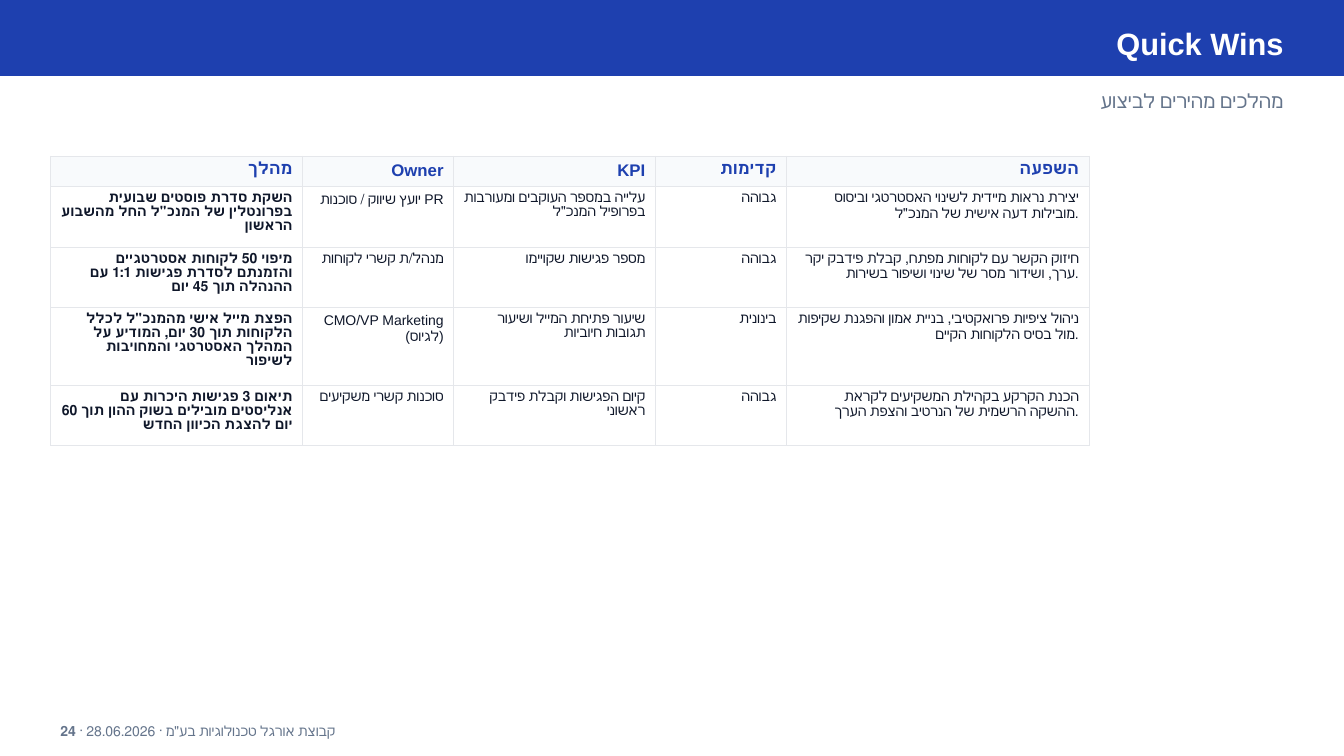
from lxml import etree
from pptx import Presentation
from pptx import util as u
from pptx.dml.color import RGBColor
from pptx.enum import shapes, text
from pptx.oxml.ns import qn

BLUE = RGBColor(0x1E, 0x40, 0xAF)
WHITE = RGBColor(0xFF, 0xFF, 0xFF)
SLATE = RGBColor(0x64, 0x74, 0x8B)
INK = RGBColor(0x0F, 0x17, 0x2A)
PALE = RGBColor(0xF8, 0xFA, 0xFC)
BORDER = RGBColor(0xE5, 0xE7, 0xEB)

WIDTH, HEIGHT = u.Inches(13.33), u.Inches(7.5)
ROW = HEIGHT // 150
MARGIN = 10 * ROW
CONTENT_WIDTH = WIDTH - 2 * MARGIN
COLUMN_SPANS = [50, 30, 40, 26, 60]

HEADERS = ["מהלך", "Owner", "KPI", "קדימות", "השפעה"]
MOVES = [
    ['השקת סדרת פוסטים שבועית בפרונטלין של המנכ"ל החל מהשבוע הראשון',
     "יועץ שיווק / סוכנות PR",
     'עלייה במספר העוקבים ומעורבות בפרופיל המנכ"ל',
     "גבוהה",
     'יצירת נראות מיידית לשינוי האסטרטגי וביסוס מובילות דעה אישית של המנכ"ל.'],
    ["מיפוי 50 לקוחות אסטרטגיים והזמנתם לסדרת פגישות 1:1 עם ההנהלה תוך 45 יום",
     "מנהל/ת קשרי לקוחות",
     "מספר פגישות שקויימו",
     "גבוהה",
     "חיזוק הקשר עם לקוחות מפתח, קבלת פידבק יקר ערך, ושידור מסר של שינוי ושיפור בשירות."],
    ['הפצת מייל אישי מהמנכ"ל לכלל הלקוחות תוך 30 יום, המודיע על המהלך האסטרטגי והמחויבות לשיפור',
     "CMO/VP Marketing (לגיוס)",
     "שיעור פתיחת המייל ושיעור תגובות חיוביות",
     "בינונית",
     "ניהול ציפיות פרואקטיבי, בניית אמון והפגנת שקיפות מול בסיס הלקוחות הקיים."],
    ["תיאום 3 פגישות היכרות עם אנליסטים מובילים בשוק ההון תוך 60 יום להצגת הכיוון החדש",
     "סוכנות קשרי משקיעים",
     "קיום הפגישות וקבלת פידבק ראשוני",
     "גבוהה",
     "הכנת הקרקע בקהילת המשקיעים לקראת ההשקה הרשמית של הנרטיב והצפת הערך."],
]
FOOTER = 'קבוצת אורגל טכנולוגיות בע"מ · 28.06.2026 · '
PAGE_NUMBER = "24"


def set_font(font, size, color, bold=False):
    font.name = "Arial"
    font.size = u.Pt(size)
    font.color.rgb = color
    font.bold = bold


def add_band(page):
    band = page.shapes.add_shape(shapes.MSO_SHAPE.RECTANGLE, 0, 0, WIDTH, 15 * ROW)
    band.shadow.inherit = False
    band.fill.solid()
    band.fill.fore_color.rgb = BLUE
    band.line.color.rgb = BLUE
    band.line.width = u.Pt(1)


def add_text_row(page, top, rows):
    box = page.shapes.add_textbox(MARGIN, top * ROW, CONTENT_WIDTH, rows * ROW)
    frame = box.text_frame
    frame.word_wrap = True
    frame.vertical_anchor = text.MSO_ANCHOR.MIDDLE
    return frame.paragraphs[0]


def add_heading(page, top, rows, words, size, color, bold=False):
    para = add_text_row(page, top, rows)
    para.text = words
    para.alignment = text.PP_ALIGN.RIGHT
    para._p.get_or_add_pPr().set("rtl", "1")
    set_font(para.font, size, color, bold)


def add_footer(page):
    para = add_text_row(page, 142, 6)
    for words, bold in [(FOOTER, False), (PAGE_NUMBER, True)]:
        span = para.add_run()
        span.text = words
        set_font(span.font, 10, SLATE, bold)


def add_borders(cell):
    properties = cell._tc.get_or_add_tcPr()
    for position, side in enumerate(["lnL", "lnR", "lnT", "lnB"]):
        line = etree.Element(qn(f"a:{side}"), w=str(u.Pt(0.5)))
        fill = etree.SubElement(line, qn("a:solidFill"))
        etree.SubElement(fill, qn("a:srgbClr"), val=str(BORDER))
        properties.insert(position, line)


def fill_cell(cell, words, size, color, bold, background=None):
    para = cell.text_frame.paragraphs[0]
    para.text = words
    para.alignment = text.PP_ALIGN.RIGHT
    set_font(para.font, size, color, bold)
    if background is None:
        cell.fill.background()
    else:
        cell.fill.solid()
        cell.fill.fore_color.rgb = background
    add_borders(cell)


def add_moves_table(page):
    frame = page.shapes.add_table(len(MOVES) + 1, len(HEADERS), MARGIN, 31 * ROW,
                                  CONTENT_WIDTH, 20 * ROW)
    table = frame.table
    table.first_row = False
    table.horz_banding = False
    for column, span in zip(table.columns, COLUMN_SPANS):
        column.width = span * ROW
    for row in table.rows:
        row.height = 0
    frame.width, frame.height = CONTENT_WIDTH, 20 * ROW
    for column, words in enumerate(HEADERS):
        fill_cell(table.cell(0, column), words, 12, BLUE, True, PALE)
    for row, move in enumerate(MOVES, 1):
        for column, words in enumerate(move):
            fill_cell(table.cell(row, column), words, 10, INK, column == 0)


def main():
    deck = Presentation()
    deck.slide_width, deck.slide_height = WIDTH, HEIGHT
    page = deck.slides.add_slide(deck.slide_layouts[6])
    add_band(page)
    add_heading(page, 2, 13, "Quick Wins", 22, WHITE, True)
    add_heading(page, 16, 8, "מהלכים מהירים לביצוע", 14, SLATE)
    add_moves_table(page)
    add_footer(page)
    deck.save("out.pptx")


if __name__ == "__main__":
    main()
